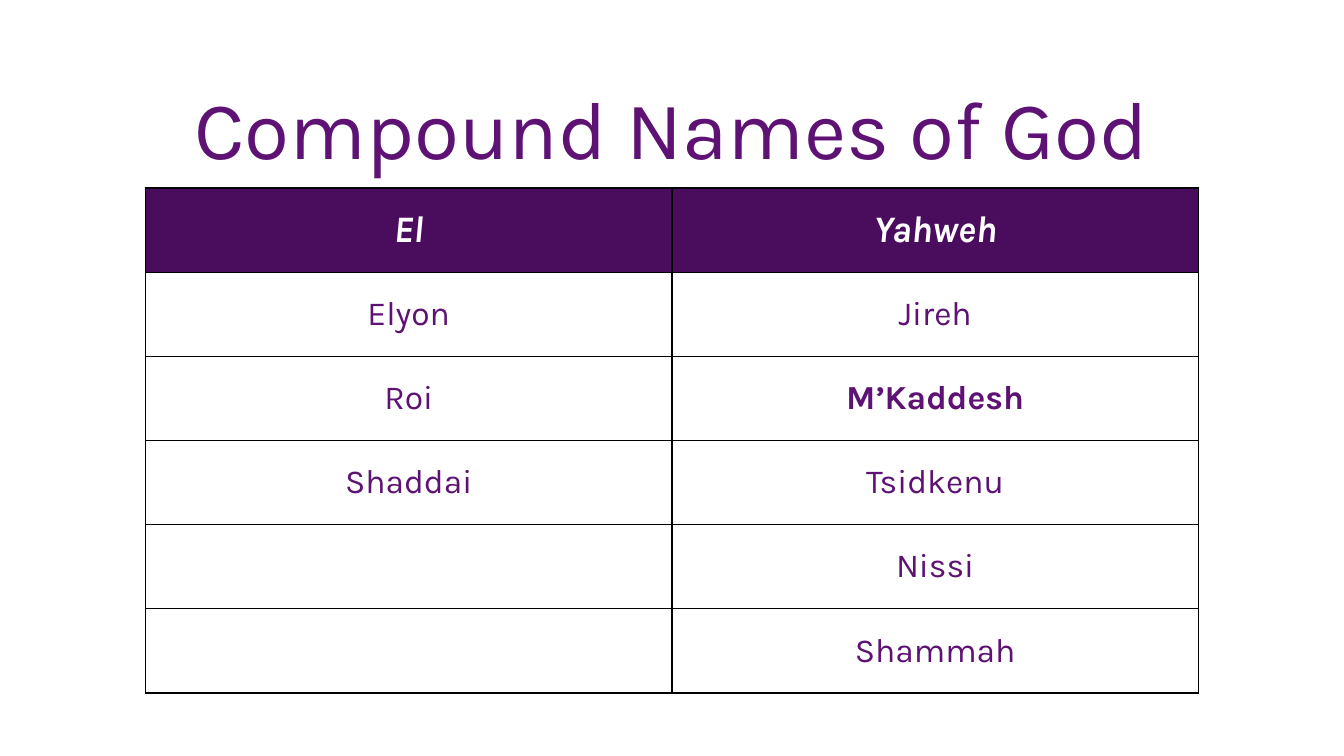
from lxml.etree import SubElement
from pptx import Presentation
from pptx.dml.color import RGBColor
from pptx.enum.text import MSO_ANCHOR, PP_ALIGN
from pptx.oxml.ns import qn
from pptx.util import Cm, Pt

TITLE = "Compound Names of God"
ROWS = [
    ("El", "Yahweh"),
    ("Elyon", "Jireh"),
    ("Roi", "M’Kaddesh"),
    ("Shaddai", "Tsidkenu"),
    ("", "Nissi"),
    ("", "Shammah"),
]
HIGHLIGHT = "M’Kaddesh"

FONT = "Karla"
PURPLE = RGBColor(0x5D, 0x12, 0x74)
DARK_PURPLE = RGBColor(0x4A, 0x0D, 0x5E)
WHITE = RGBColor(0xFF, 0xFF, 0xFF)
BLACK = RGBColor(0x00, 0x00, 0x00)

COL_WIDTH = Cm(9.95)
ROW_HEIGHT = Cm(1.59)


def style(p, size, color, bold=False, italic=False):
    p.alignment = PP_ALIGN.CENTER
    font = p.font
    font.name, font.size = FONT, Pt(size)
    font.bold, font.italic = bold, italic
    font.color.rgb = color


def add_borders(cell):
    tc_pr = cell._tc.get_or_add_tcPr()
    for side in ("lnL", "lnR", "lnT", "lnB"):
        ln = SubElement(tc_pr, qn(f"a:{side}"), w=str(Pt(0.75)))
        fill = SubElement(ln, qn("a:solidFill"))
        SubElement(fill, qn("a:srgbClr"), val=str(BLACK))


prs = Presentation()
prs.slide_width, prs.slide_height = Cm(25.4), Cm(14.28)
s = prs.slides.add_slide(prs.slide_layouts[5])

title = s.shapes.title
title.left, title.top, title.width, title.height = Cm(1.27), Cm(1.02), Cm(22.86), Cm(2.97)
tf = title.text_frame
tf.text = TITLE
tf.word_wrap = True
tf.vertical_anchor = MSO_ANCHOR.MIDDLE
style(tf.paragraphs[0], 44, PURPLE)
tf.paragraphs[0].line_spacing = 0.9

table = s.shapes.add_table(
    len(ROWS), 2, Cm(2.75), Cm(3.55), COL_WIDTH * 2, ROW_HEIGHT * len(ROWS)
).table
table.first_row = table.horz_banding = False
for row, names in enumerate(ROWS):
    for col, name in enumerate(names):
        cell = table.cell(row, col)
        cell.text = name
        cell.vertical_anchor = MSO_ANCHOR.MIDDLE
        add_borders(cell)
        p = cell.text_frame.paragraphs[0]
        if row == 0:
            cell.fill.solid()
            cell.fill.fore_color.rgb = DARK_PURPLE
            style(p, 20, WHITE, bold=True, italic=True)
        else:
            cell.fill.background()
            style(p, 18, PURPLE, bold=name == HIGHLIGHT)

prs.save("out.pptx")
